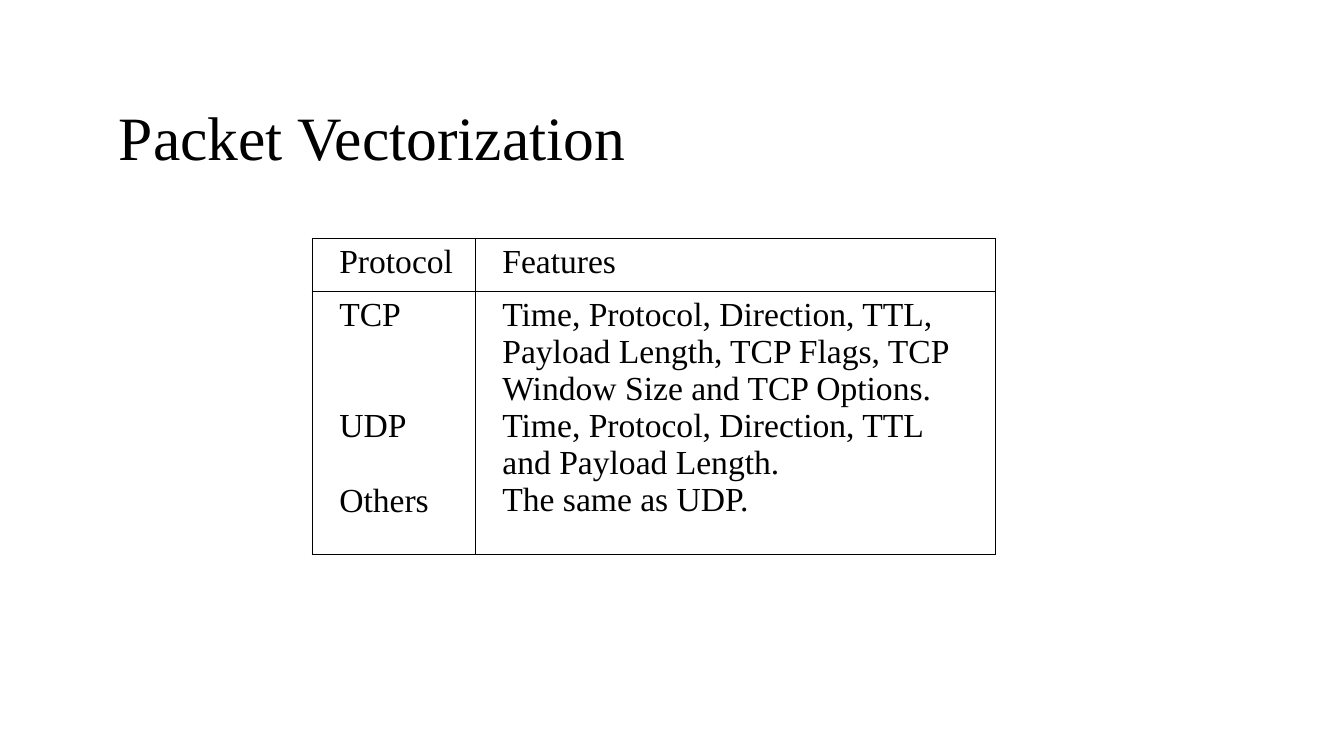
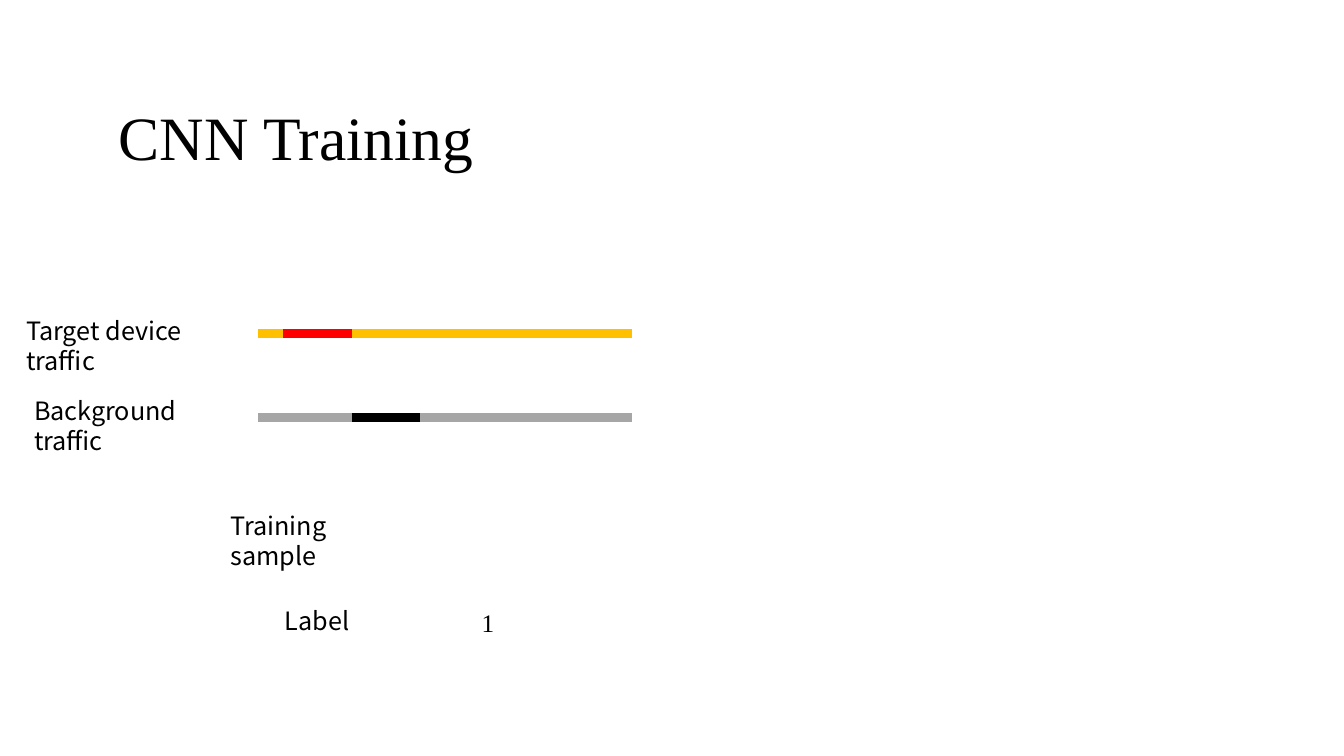
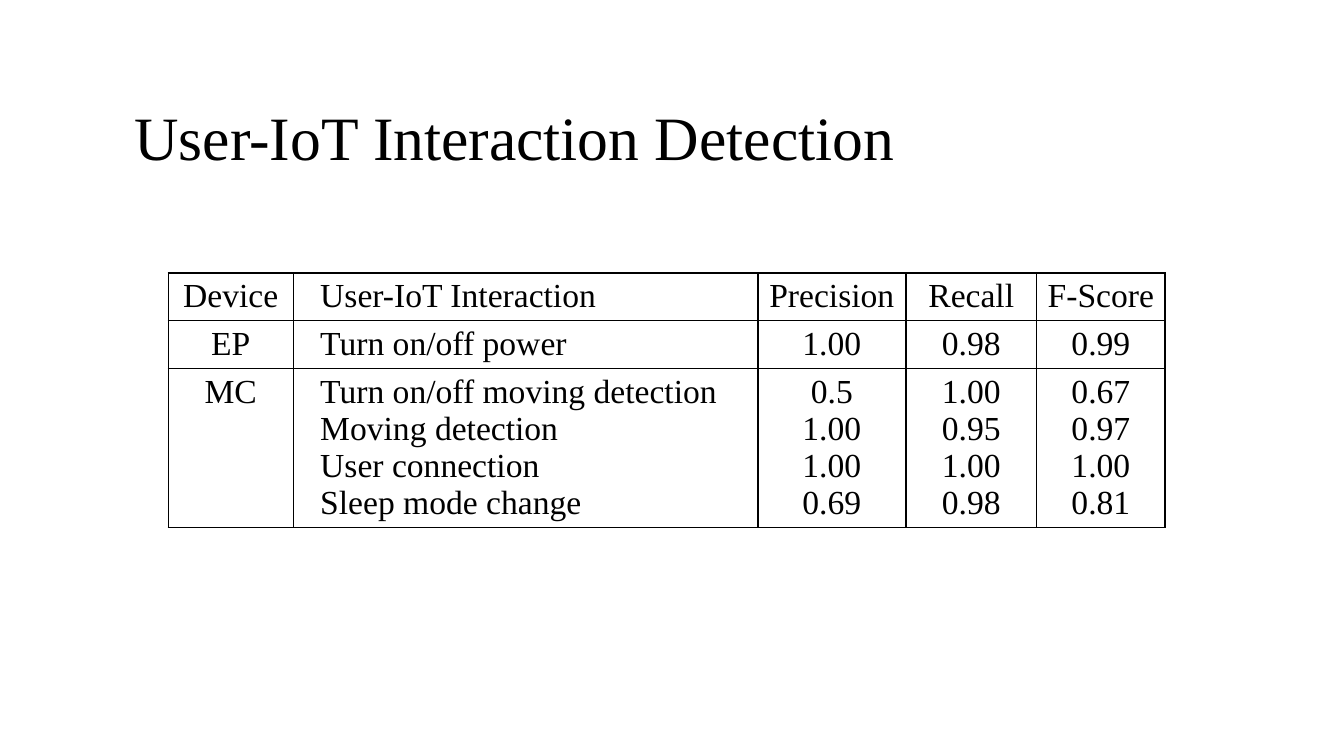
from lxml.etree import SubElement
from pptx import Presentation
from pptx.dml.color import RGBColor
from pptx.enum.shapes import MSO_CONNECTOR
from pptx.enum.text import MSO_ANCHOR, PP_ALIGN
from pptx.oxml import parse_xml
from pptx.oxml.ns import nsdecls, qn
from pptx.util import Cm, Pt

SERIF = "Times New Roman"
SANS = "Noto Sans CJK SC"
BLACK = "000000"
TABLE_LINE = 26.6  # height in points of one line of table text


def style(paragraph, font, size):
    for run in paragraph.runs:
        run.font.name = font
        run.font.size = Pt(size)
        run.font.color.rgb = RGBColor.from_string(BLACK)


def add_grid(slide, left, top, widths, heights, rows, left_columns):
    grid = slide.shapes.add_table(len(rows), len(widths), Cm(left), Cm(top),
                                  Cm(sum(widths)), Cm(sum(heights))).table
    for column, width in zip(grid.columns, widths):
        column.width = Cm(width)
    for row, height in zip(grid.rows, heights):
        row.height = Cm(height)
    for r, texts in enumerate(rows):
        for c, text in enumerate(texts):
            cell = grid.cell(r, c)
            cell.text_frame.text = text
            aligned_left = c in left_columns
            cell.margin_left = Cm(0.68 if aligned_left else 0.25)
            # Paragraph format
            for paragraph in cell.text_frame.paragraphs:
                paragraph.alignment = PP_ALIGN.LEFT if aligned_left else PP_ALIGN.CENTER
                style(paragraph, SERIF, 24)
            # Thin black border on every side
            properties = cell._tc.get_or_add_tcPr()
            for side in ("lnL", "lnR", "lnT", "lnB"):
                border = SubElement(properties, qn(f"a:{side}"), w=str(Pt(1)))
                fill = SubElement(border, qn("a:solidFill"))
                SubElement(fill, qn("a:srgbClr"), val=BLACK)
            cell.fill.background()
    return grid


prs = Presentation()
prs.slide_width, prs.slide_height = Cm(33.87), Cm(19.05)

# Slides with their titles; the last title is slightly indented
slides = []
for heading, indent in (("Packet Vectorization", 0),
                        ("CNN Training", 0),
                        ("User-IoT Interaction Detection", 0.39)):
    slide = prs.slides.add_slide(prs.slide_layouts[5])
    title = slide.shapes.title
    title.left, title.top = Cm(2.74 + indent), Cm(1.7)
    title.width, title.height = Cm(29.21 - indent), Cm(3.68)
    title.text_frame.text = heading
    title.text_frame.vertical_anchor = MSO_ANCHOR.MIDDLE
    title_line = title.text_frame.paragraphs[0]
    title_line.alignment = PP_ALIGN.LEFT
    title_line.line_spacing = 0.9
    style(title_line, SERIF, 44)
    slides.append(slide)
vectorization, training, detection = slides

# Packet features by protocol
features = (
    "Time, Protocol, Direction, TTL,\nPayload Length, TCP Flags, TCP\n"
    "Window Size and TCP Options.\nTime, Protocol, Direction, TTL\n"
    "and Payload Length.\nThe same as UDP."
)
protocols = add_grid(vectorization, 7.87, 6.02, (4.11, 13.11), (1.32, 6.63),
                     (("Protocol", "Features"), ("TCP\nUDP\nOthers", features)), (0, 1))
# Each protocol name lines up with the start of its features
tcp, udp, others = protocols.cell(1, 0).text_frame.paragraphs
udp.space_before = Pt(2 * TABLE_LINE)
others.space_before = Pt(TABLE_LINE)

# Traffic streams, each with the window taken from it
target_y, background_y = 8.41, 10.52
for start, end, y, color in ((6.5, 15.93, target_y, "FFC000"),
                             (6.5, 15.93, background_y, "A6A6A6"),
                             (7.14, 8.86, target_y, "FF0000"),
                             (8.86, 10.59, background_y, BLACK)):
    stream = training.shapes.add_connector(MSO_CONNECTOR.STRAIGHT,
                                           Cm(start), Cm(y), Cm(end), Cm(y))
    stream.line.color.rgb = RGBColor.from_string(color)
    stream.line.width = Pt(6.75)
    stream._element.spPr.append(parse_xml(f"<a:effectLst {nsdecls('a')}/>"))

# Labels of the training diagram
for text, left, top, width, height, font in (
        ("Target device traffic", 0.41, 7.82, 6.07, 1.8, SANS),
        ("Background traffic", 0.61, 9.83, 5.66, 1.8, SANS),
        ("Training sample", 5.56, 12.73, 4.88, 1.8, SANS),
        ("Label", 6.93, 15.14, 2.31, 1.02, SANS),
        ("1", 11.89, 15.19, 1.19, 1.02, SERIF)):
    label = training.shapes.add_textbox(Cm(left), Cm(top), Cm(width), Cm(height))
    label.text_frame.word_wrap = True
    label.text_frame.text = text
    style(label.text_frame.paragraphs[0], font, 18)

# Detection scores by device and interaction
scores = (
    ("Device", "User-IoT Interaction", "Precision", "Recall", "F-Score"),
    ("EP", "Turn on/off power", "1.00", "0.98", "0.99"),
    ("MC", "Turn on/off moving detection\nMoving detection\nUser connection\nSleep mode change",
     "0.5\n1.00\n1.00\n0.69", "1.00\n0.95\n1.00\n0.98", "0.67\n0.97\n1.00\n0.81"),
)
add_grid(detection, 4.24, 6.88, (3.15, 11.71, 3.73, 3.3, 3.23), (1.2, 1.2, 4.01), scores, (1,))

prs.save("out.pptx")
